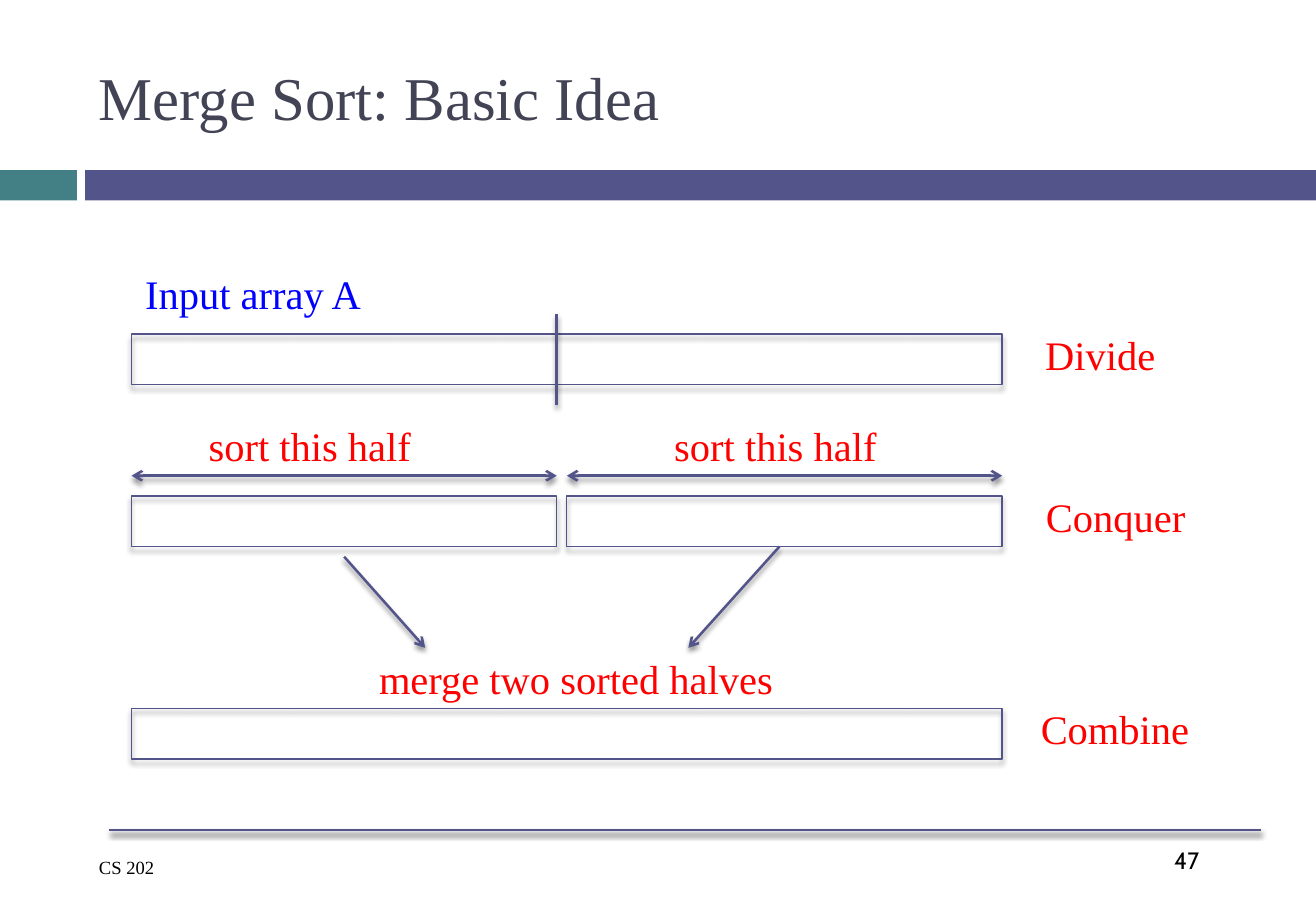
from lxml.etree import SubElement
from pptx import Presentation
from pptx.dml.color import RGBColor
from pptx.enum.shapes import MSO_CONNECTOR as Connector, MSO_SHAPE as Preset
from pptx.enum.text import MSO_ANCHOR as Anchor, PP_ALIGN as Align
from pptx.oxml.ns import qn
from pptx.util import Emu, Pt

EMU_PER_PX = 7620
SERIF = "Times New Roman"
INDIGO, TEAL, SLATE = "53548A", "438086", "424456"
RED, BLUE, BLACK = "FF0000", "0000FF", "000000"
ARRAY_LEFT, ARRAY_WIDTH, ARRAY_HEIGHT = 130, 860, 50
ARRAY_RIGHT = ARRAY_LEFT + ARRAY_WIDTH
SPLIT, HALF_GAP = 550, 10
DIVIDE_TOP, CONQUER_TOP, COMBINE_TOP = 330, 490, 700
LABEL_HEIGHT = 60


def px(length):
    return Emu(length * EMU_PER_PX)


def colour(hex_text):
    return RGBColor.from_string(hex_text)


def add_shadow(shape):
    effects = SubElement(shape._element.spPr, qn("a:effectLst"))
    shadow = SubElement(effects, qn("a:outerShdw"), blurRad="38100",
                        dist="30480", dir="5400000", rotWithShape="0")
    tint = SubElement(shadow, qn("a:srgbClr"), val=BLACK)
    SubElement(tint, qn("a:alpha"), val="45000")


def add_bar(page, left, width, fill):
    bar = page.shapes.add_shape(Preset.RECTANGLE, px(left), px(168), px(width), px(30))
    bar.shadow.inherit = False
    bar.fill.solid()
    bar.fill.fore_color.rgb = colour(fill)
    bar.line.fill.background()


def add_array(page, left, top, width):
    array = page.shapes.add_shape(Preset.RECTANGLE, px(left), px(top),
                                  px(width), px(ARRAY_HEIGHT))
    array.fill.background()
    array.line.color.rgb = colour(INDIGO)
    array.line.width = Pt(0.79)
    add_shadow(array)


def add_line(page, start, end, arrows=()):
    line = page.shapes.add_connector(Connector.STRAIGHT, px(start[0]), px(start[1]),
                                     px(end[0]), px(end[1]))
    line.line.color.rgb = colour(INDIGO)
    line.line.width = Pt(1.5)
    for arrow in arrows:
        SubElement(line.line._get_or_add_ln(), qn(f"a:{arrow}"), type="arrow")
    add_shadow(line)


def add_text(page, text, left, top, width, height, size, ink,
             font=SERIF, align=Align.LEFT, anchor=Anchor.TOP, wrap=True):
    box = page.shapes.add_textbox(px(left), px(top), px(width), px(height))
    frame = box.text_frame
    frame.word_wrap = wrap
    frame.vertical_anchor = anchor
    para = frame.paragraphs[0]
    para.alignment = align
    span = para.add_run()
    span.text = text
    span.font.name = font
    span.font.size = Pt(size)
    span.font.color.rgb = colour(ink)


def add_label(page, text, left, top, width, ink=RED):
    add_text(page, text, left, top, width, LABEL_HEIGHT, 24, ink,
             align=Align.CENTER, wrap=False)


def add_frame(page):
    add_bar(page, 0, 76, TEAL)
    add_bar(page, 84, 1216, INDIGO)
    add_text(page, "47", 1148, 830, 97, 60, 14, BLACK, font="Cabin")
    add_line(page, (108, 820), (1246, 820))
    add_text(page, "CS 202", 86, 840, 239, 35, 11, BLACK)
    add_text(page, "Merge Sort: Basic Idea", 86, 30, 1159, 130, 36, SLATE,
             anchor=Anchor.MIDDLE)


def add_divide(page):
    add_array(page, ARRAY_LEFT, DIVIDE_TOP, ARRAY_WIDTH)
    add_line(page, (SPLIT, DIVIDE_TOP - 20), (SPLIT, DIVIDE_TOP + 70))
    add_label(page, "Divide", 1020, DIVIDE_TOP - 10, 134)
    add_label(page, "Input array A", ARRAY_LEFT, 260, 240, BLUE)


def add_conquer(page):
    halves = ((ARRAY_LEFT, SPLIT, 190), (SPLIT + HALF_GAP, ARRAY_RIGHT, 650))
    arrow_top = CONQUER_TOP - 20
    for left, right, label_left in halves:
        add_array(page, left, CONQUER_TOP, right - left)
        add_line(page, (left, arrow_top), (right, arrow_top), ("headEnd", "tailEnd"))
        add_label(page, "sort this half", label_left, arrow_top - LABEL_HEIGHT, 232)
    add_label(page, "Conquer", 1020, CONQUER_TOP - 10, 164)


def add_combine(page):
    for start, end in (((340, 550), (420, 640)), ((770, 540), (680, 640))):
        add_line(page, start, end, ("tailEnd",))
    add_array(page, ARRAY_LEFT, COMBINE_TOP, ARRAY_WIDTH)
    add_label(page, "merge two sorted halves", 360, COMBINE_TOP - LABEL_HEIGHT, 418)
    add_label(page, "Combine", 1015, COMBINE_TOP - 10, 173)


def main():
    deck = Presentation()
    deck.slide_width, deck.slide_height = px(1300), px(900)
    page = deck.slides.add_slide(deck.slide_layouts[6])
    add_frame(page)
    add_divide(page)
    add_conquer(page)
    add_combine(page)
    deck.save("out.pptx")


if __name__ == "__main__":
    main()
